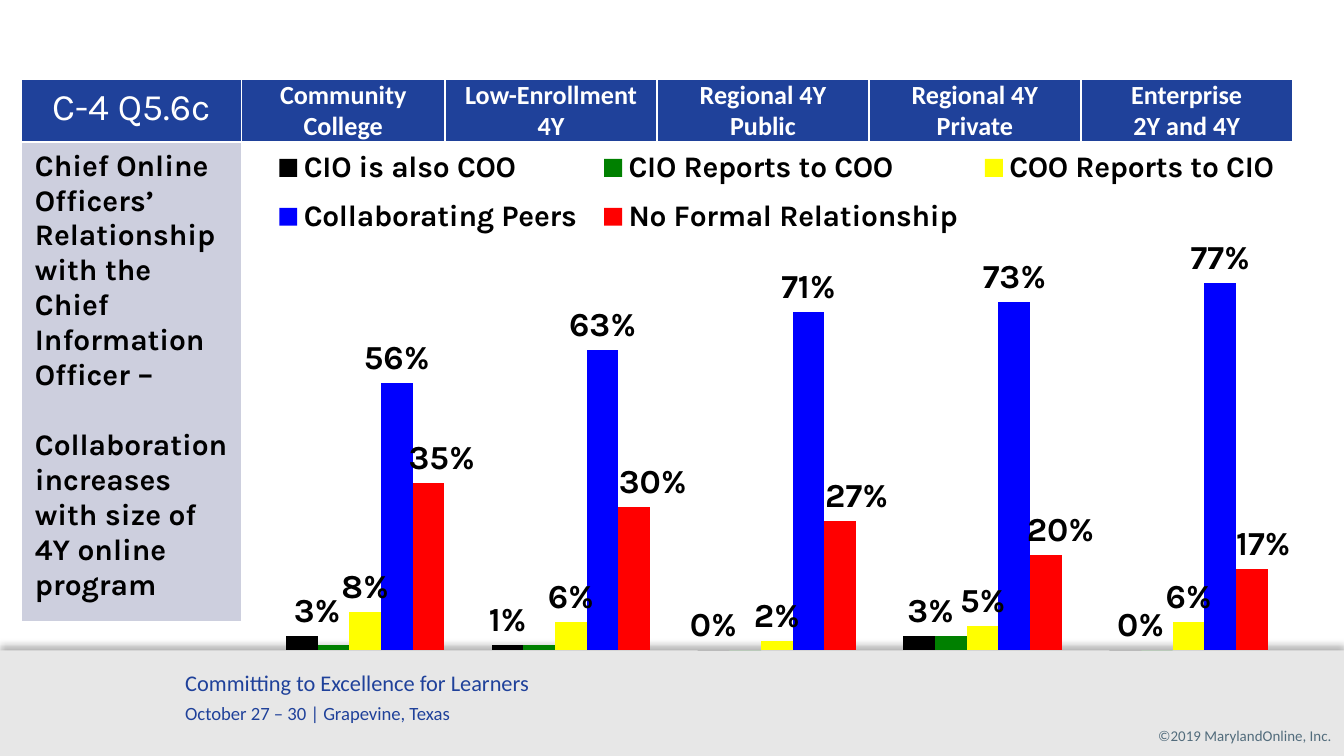
from lxml import etree
from pptx import Presentation
from pptx.chart.data import CategoryChartData
from pptx.dml.color import RGBColor
from pptx.enum.chart import XL_CHART_TYPE, XL_LABEL_POSITION, XL_LEGEND_POSITION
from pptx.enum.shapes import MSO_SHAPE
from pptx.enum.text import MSO_ANCHOR, PP_ALIGN
from pptx.oxml import parse_xml
from pptx.oxml.ns import nsdecls, qn
from pptx.util import Inches, Pt

LEFT, CENTER, RIGHT = PP_ALIGN.LEFT, PP_ALIGN.CENTER, PP_ALIGN.RIGHT
TOP, MIDDLE = MSO_ANCHOR.TOP, MSO_ANCHOR.MIDDLE
COLUMN = XL_CHART_TYPE.COLUMN_CLUSTERED
ABOVE = XL_LABEL_POSITION.OUTSIDE_END
BESIDE = XL_LEGEND_POSITION.RIGHT

WHITE = RGBColor(0xFF, 0xFF, 0xFF)
BLACK = RGBColor(0, 0, 0)
NAVY = RGBColor(0x1F, 0x41, 0x9A)
LILAC = RGBColor(0xCD, 0xCF, 0xDE)
GREY = RGBColor(0xE7, 0xE7, 0xE7)
SLATE = RGBColor(0x52, 0x6C, 0x7C)
GREEN = RGBColor(0, 0x80, 0)
YELLOW = RGBColor(0xFF, 0xFF, 0)
BLUE = RGBColor(0, 0, 0xFF)
RED = RGBColor(0xFF, 0, 0)

WIDE = 10
HIGH = WIDE * 9 / 16
KARLA, CALIBRI = "Karla", "Calibri"

HEADS = [["Community College"], ["Low-Enrollment 4Y"], ["Regional 4Y Public"],
         ["Regional 4Y Private"], ["Enterprise", "2Y and 4Y"]]
TOPIC = ["Chief Online Officers’ Relationship with the Chief Information Officer –",
         "Collaboration increases with size of 4Y online program"]

# Name, colour, values, whether labelled, sideways label shifts by point
SERIES = [
    ("CIO is also COO ", BLACK, (0.03, 0.01, 0, 0.03, 0), True,
     {0: 0.015, 3: 0.011, 4: 0.015}),
    ("CIO Reports to COO", GREEN, (0.01, 0.01, 0, 0.03, 0), False, {}),
    ("COO Reports to CIO", YELLOW, (0.08, 0.06, 0.02, 0.05, 0.06), True, {}),
    ("Collaborating Peers", BLUE, (0.56, 0.63, 0.71, 0.73, 0.77), True, {}),
    ("No Formal Relationship", RED, (0.35, 0.3, 0.27, 0.2, 0.17), True,
     {0: 0.013, 1: 0.018, 2: 0.016, 3: 0.014, 4: 0.011}),
]


def add_run(para, text, size, font, color, bold=False):
    run = para.add_run()
    run.text = text
    face = run.font
    face.size, face.name, face.bold = Pt(size), font, bold
    face.color.rgb = color


def put(frame, lines, size, font, color, bold=False, align=LEFT, gap=0):
    """Write one paragraph per line, with a gap between paragraphs."""
    frame.word_wrap = True
    for i, line in enumerate(lines):
        para = frame.paragraphs[0] if i == 0 else frame.add_paragraph()
        para.alignment = align
        if i and gap:
            para.space_before = Pt(gap)
        add_run(para, line, size, font, color, bold)


def add_band(slide, box):
    """Footer band with an upward shadow, tagline, date and copyright."""
    x, y, w, _ = box
    band = slide.shapes.add_shape(MSO_SHAPE.RECTANGLE, *map(Inches, box))
    band.fill.solid()
    band.fill.fore_color.rgb = GREY
    band.line.fill.background()
    band.shadow.inherit = False
    glow = band.element.spPr.find(qn("a:effectLst"))
    glow.append(parse_xml(
        f'<a:outerShdw {nsdecls("a")} blurRad="{Pt(4)}" dist="{Pt(3)}" dir="16200000"'
        ' rotWithShape="0"><a:srgbClr val="000000"><a:alpha val="30000"/>'
        '</a:srgbClr></a:outerShdw>'))

    def note(*place):
        return slide.shapes.add_textbox(*map(Inches, place)).text_frame

    right = note(x + w - 1.68, y + 0.52, 1.59, 0.24)
    right.margin_right = 0
    put(right, ["©2019 MarylandOnline, Inc."], 8, CALIBRI, SLATE, align=RIGHT)
    main = note(x + 1.28, y + 0.09, 2.94, 0.51)
    put(main, ["Committing to Excellence for Learners"], 12, CALIBRI, NAVY)
    date = main.add_paragraph()
    date.space_before = Pt(3)
    add_run(date, "October 27 – 30 | Grapevine, Texas", 10, CALIBRI, NAVY)


def style(cell, fill):
    """Cell fill and thin white borders."""
    props = cell._tc.get_or_add_tcPr()
    for side in ("lnL", "lnR", "lnT", "lnB"):
        props.append(parse_xml(
            f'<a:{side} {nsdecls("a")} w="{Pt(1)}"><a:solidFill>'
            f'<a:srgbClr val="FFFFFF"/></a:solidFill></a:{side}>'))
    if fill is None:
        cell.fill.background()
    else:
        cell.fill.solid()
        cell.fill.fore_color.rgb = fill


def add_grid(slide, box):
    """Header row above a topic cell and an open chart area."""
    table = slide.shapes.add_table(2, 6, *map(Inches, box)).table
    parts = [1.64, 1.52] + [1.58] * 4
    for col, part in zip(table.columns, parts):
        col.width = Inches(box[2] * part / sum(parts))
    table.rows[0].height = Inches(0.46)
    table.rows[1].height = Inches(box[3] - 0.46)

    for i in range(6):
        style(table.cell(0, i), NAVY)
        style(table.cell(1, i), None if i else LILAC)
    table.cell(1, 1).merge(table.cell(1, 5))

    # Header cells
    first = table.cell(0, 0)
    first.vertical_anchor = TOP
    put(first.text_frame, ["C-4 Q5.6c"], 20, KARLA, WHITE, align=CENTER)
    for i, lines in enumerate(HEADS, 1):
        cell = table.cell(0, i)
        cell.vertical_anchor = MIDDLE
        cell.margin_left = cell.margin_right = Inches(0.07)
        cell.margin_top = cell.margin_bottom = 0
        put(cell.text_frame, lines, 14, CALIBRI, WHITE, True, CENTER)

    # Topic cell
    topic = table.cell(1, 0)
    topic.vertical_anchor = TOP
    put(topic.text_frame, TOPIC, 16, KARLA, BLACK, True, gap=18.7)


def layout(**parts):
    """Manual chart layout from shares of the chart's size."""
    node = parse_xml(f'<c:layout {nsdecls("c")}><c:manualLayout/></c:layout>')
    for tag, val in parts.items():
        etree.SubElement(node[0], qn(f"c:{tag}")).set("val", str(val))
    return node


def place(owner, before, node):
    """Put a layout right after the child it must follow."""
    for old in owner.findall(qn("c:layout")):
        owner.remove(old)
    if before is None:
        owner.insert(0, node)
    else:
        owner.find(qn(before)).addnext(node)


def add_bars(slide, box):
    """Clustered columns with a two-row legend on top."""
    data = CategoryChartData(number_format="0%")
    data.categories = ["1", "2", "3", "4", "5"]
    for name, _, vals, _, _ in SERIES:
        data.add_series(name, vals)
    chart = slide.shapes.add_chart(COLUMN, *map(Inches, box), data).chart
    chart.has_title = False
    chart.font.size, chart.font.name = Pt(18), KARLA
    chart.font.color.rgb = BLACK

    # Hidden axes
    chart.category_axis.visible = False
    axis = chart.value_axis
    axis.visible = axis.has_major_gridlines = False
    axis.minimum_scale, axis.maximum_scale = 0, 0.9

    # Columns and labels
    plot = chart.plots[0]
    plot.vary_by_categories = False
    plot.gap_width, plot.overlap = 150, 0
    for ser, (_, color, _, shown, shifts) in zip(plot.series, SERIES):
        ser.format.fill.solid()
        ser.format.fill.fore_color.rgb = color
        if not shown:
            continue
        tags = ser.data_labels
        tags.show_value, tags.position = True, ABOVE
        tags.number_format, tags.number_format_is_linked = "0%", False
        tags.font.size, tags.font.bold = Pt(18), True
        for i in shifts:
            tag = ser.points[i].data_label
            tag.font.size, tag.font.bold = Pt(18), True
            tag.position = ABOVE
        nodes = ser._element.iter(qn("c:dLbl"))
        for node, shift in zip(nodes, shifts.values()):
            place(node, "c:idx", layout(x=shift, y=0))

    # Legend and plot area
    chart.has_legend = True
    key = chart.legend
    key.position, key.include_in_layout = BESIDE, False
    key.font.size, key.font.bold = Pt(16), True
    root = chart.element.find(qn("c:chart"))
    place(root.find(qn("c:legend")), "c:legendPos",
          layout(xMode="edge", yMode="edge", x=0, y=0, w=1, h=0.22))
    place(root.find(qn("c:plotArea")), None,
          layout(layoutTarget="inner", xMode="edge", yMode="edge",
                 x=0.003, y=0.166, w=1, h=0.834))


def main():
    deck = Presentation()
    deck.slide_width, deck.slide_height = Inches(WIDE), Inches(HIGH)
    slide = deck.slides.add_slide(deck.slide_layouts[6])
    add_band(slide, (0, 4.84, WIDE, HIGH - 4.84))
    add_grid(slide, (0.16, 0.59, 9.46, 4.03))
    add_bars(slide, (1.95, 1.01, 7.66, 3.83))
    deck.save("out.pptx")


if __name__ == "__main__":
    main()
